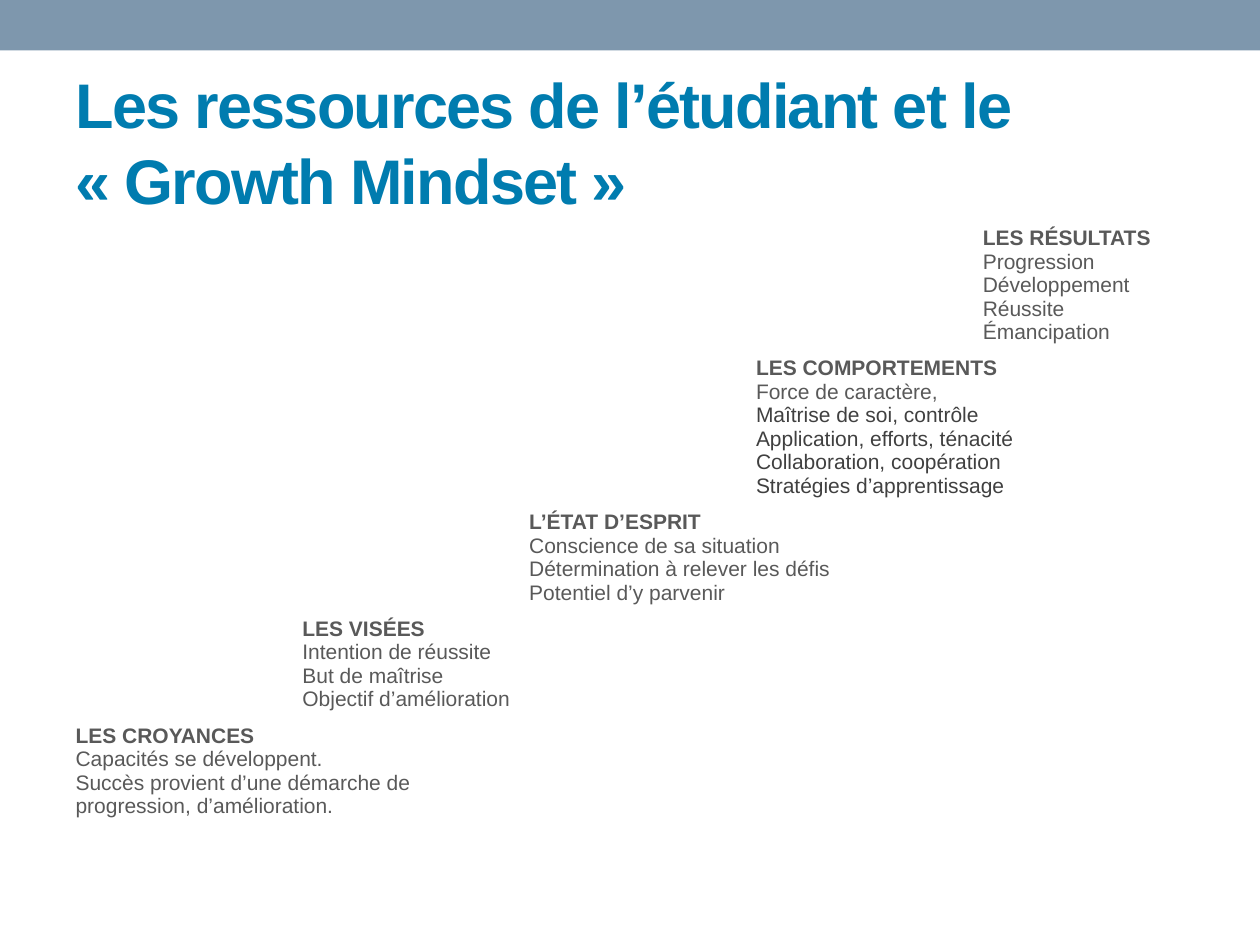
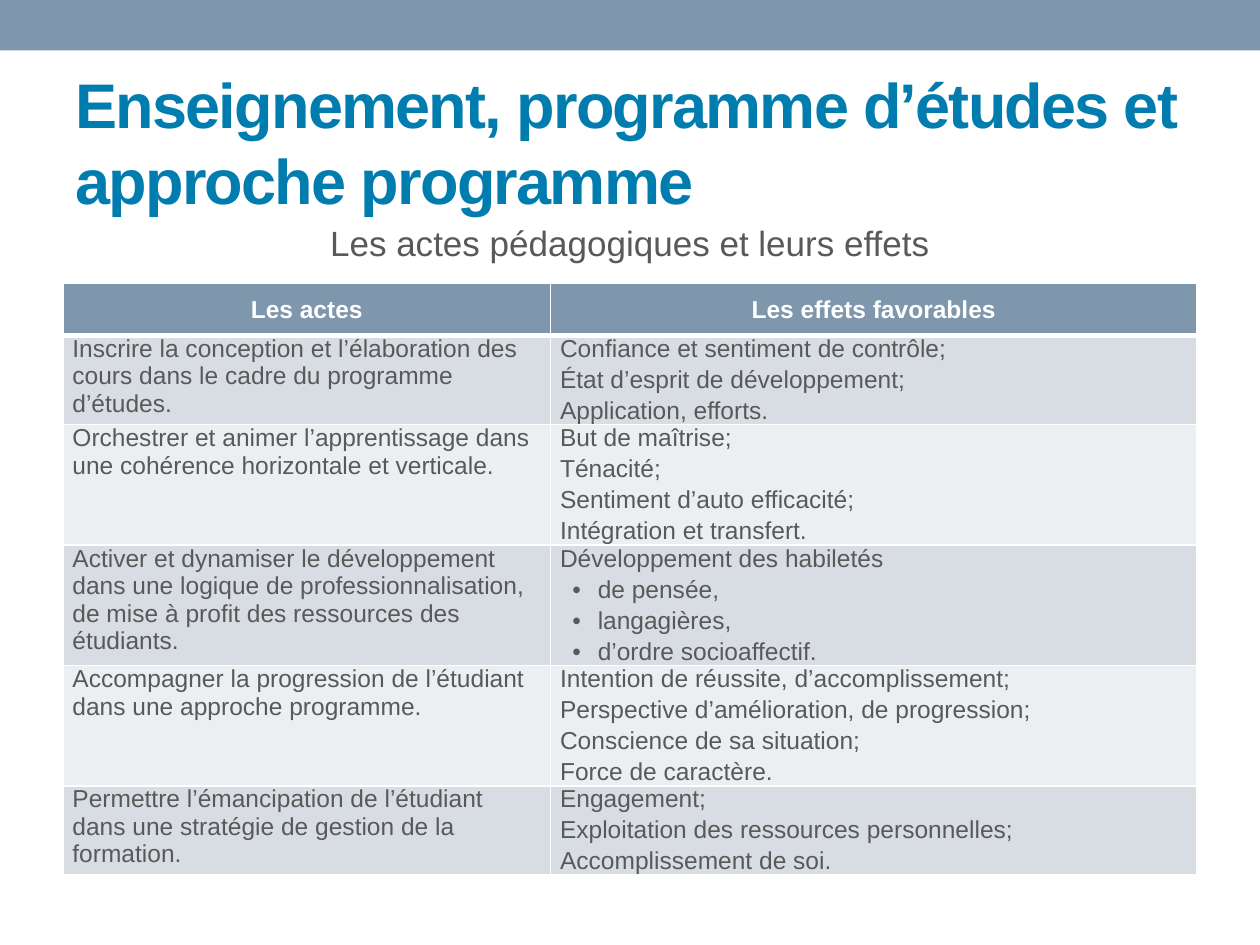
from dataclasses import dataclass

from pptx import Presentation
from pptx.dml.color import RGBColor
from pptx.enum.shapes import MSO_SHAPE
from pptx.enum.text import MSO_ANCHOR, PP_ALIGN
from pptx.oxml import parse_xml
from pptx.oxml.ns import nsdecls
from pptx.util import Cm, Pt


@dataclass(frozen=True)
class Theme:
    font: str = "Arial"
    band: str = "7E97AD"
    title: str = "007CAF"
    text: str = "595959"
    dark: str = "404040"
    white: str = "FFFFFF"
    stripes: tuple = ("D8DDE3", "ECEFF1")
    title_size: int = 36
    sub_size: int = 20
    cell_size: int = 14
    step_size: int = 12
    pitch: float = 1.12


@dataclass(frozen=True)
class Line:
    text: str
    size: int
    color: str
    bold: bool = False
    center: bool = False
    before: int = 0
    bullet: bool = False


@dataclass(frozen=True)
class Step:
    head: str
    items: tuple
    dark: tuple = ()


@dataclass(frozen=True)
class Act:
    text: str
    effects: tuple
    points: tuple = ()


THEME = Theme()
WIDTH, HEIGHT = Cm(25.4), Cm(19.05)
LEFT, BODY = Cm(1.27), Cm(22.86)
ROW = Cm(1.04)

STEPS = (
    Step("LES RÉSULTATS", ("Progression", "Développement", "Réussite", "Émancipation")),
    Step("LES COMPORTEMENTS", ("Force de caractère,",),
         ("Maîtrise de soi, contrôle", "Application, efforts, ténacité",
          "Collaboration, coopération", "Stratégies d’apprentissage")),
    Step("L’ÉTAT D’ESPRIT", ("Conscience de sa situation",
                             "Détermination à relever les défis",
                             "Potentiel d’y parvenir")),
    Step("LES VISÉES", ("Intention de réussite", "But de maîtrise",
                        "Objectif d’amélioration")),
    Step("LES CROYANCES", ("Capacités se développent.",
                           "Succès provient d’une démarche de progression, d’amélioration.")),
)

HEADS = ("Les actes", "Les effets favorables")
ACTS = (
    Act("Inscrire la conception et l’élaboration des cours dans le cadre du programme d’études.",
        ("Confiance et sentiment de contrôle;", "État d’esprit de développement;",
         "Application, efforts.")),
    Act("Orchestrer et animer l’apprentissage dans une cohérence horizontale et verticale.",
        ("But de maîtrise;", "Ténacité;", "Sentiment d’auto efficacité;",
         "Intégration et transfert.")),
    Act("Activer et dynamiser le développement dans une logique de professionnalisation, "
        "de mise à profit des ressources des étudiants.",
        ("Développement des habiletés",),
        ("de pensée,", "langagières,", "d’ordre socioaffectif.")),
    Act("Accompagner la progression de l’étudiant dans une approche programme.",
        ("Intention de réussite, d’accomplissement;",
         "Perspective d’amélioration, de progression;",
         "Conscience de sa situation;", "Force de caractère.")),
    Act("Permettre l’émancipation de l’étudiant dans une stratégie de gestion de la formation.",
        ("Engagement;", "Exploitation des ressources personnelles;",
         "Accomplissement de soi.")),
)


def rgb(color: str) -> RGBColor:
    return RGBColor.from_string(color)


def write(frame, lines: list) -> None:
    for index, line in enumerate(lines):
        para = frame.add_paragraph() if index else frame.paragraphs[0]
        para.text = line.text
        para.alignment = PP_ALIGN.CENTER if line.center else PP_ALIGN.LEFT
        para.space_before = Pt(line.before)
        font = para.font
        font.name, font.size, font.bold = THEME.font, Pt(line.size), line.bold
        font.color.rgb = rgb(line.color)
        if line.bullet:
            props = para._p.get_or_add_pPr()
            props.set("marL", str(Cm(0.76)))
            props.set("indent", str(Cm(-0.51)))
            for mark in (f'buFont {nsdecls("a")} typeface="{THEME.font}"',
                         f'buChar {nsdecls("a")} char="•"'):
                props.insert_element_before(parse_xml(f"<a:{mark}/>"),
                                            "a:tabLst", "a:defRPr", "a:extLst")


def write_cell(cell, lines: list) -> None:
    """Write lines at a fixed pitch, so that rows grow evenly."""
    write(cell.text_frame, lines)
    for para, line in zip(cell.text_frame.paragraphs, lines):
        para.line_spacing = Pt(line.size * THEME.pitch)


def add_page(deck, title: str):
    """Add a slide with the top band and its title."""
    slide = deck.slides.add_slide(deck.slide_layouts[6])
    band = slide.shapes.add_shape(MSO_SHAPE.RECTANGLE, 0, 0, WIDTH, Cm(1.02))
    band.shadow.inherit = False
    band.fill.solid()
    band.fill.fore_color.rgb = rgb(THEME.band)
    band.line.fill.background()

    frame = slide.shapes.add_textbox(LEFT, Cm(1.48), BODY, Cm(2.74)).text_frame
    frame.word_wrap = True
    frame.vertical_anchor = MSO_ANCHOR.MIDDLE
    write(frame, [Line(title, THEME.title_size, THEME.title, bold=True)])
    for run in frame.paragraphs[0].runs:
        run.font._element.set("spc", "-100")
    return slide


def add_grid(slide, top: int, rows: int, widths: list):
    """Add a table with clear cells, white rules and a thick rule below row one."""
    grid = slide.shapes.add_table(rows, len(widths), LEFT, top, BODY, ROW * rows).table
    for column, width in zip(grid.columns, widths):
        column.width = width
    for index, row in enumerate(grid.rows):
        for cell in row.cells:
            props = cell._tc.get_or_add_tcPr()
            for side in "LRTB":
                weight = 3 if (side, index) == ("B", 0) else 1
                props.append(parse_xml(
                    f'<a:ln{side} {nsdecls("a")} w="{Pt(weight)}"><a:solidFill>'
                    f'<a:srgbClr val="{THEME.white}"/></a:solidFill></a:ln{side}>'))
            cell.fill.background()
    return grid


def fill_cell(cell, color: str, lines: list) -> None:
    cell.fill.solid()
    cell.fill.fore_color.rgb = rgb(color)
    cell.margin_left = cell.margin_right = Cm(0.19)
    cell.margin_top = cell.margin_bottom = 0
    write_cell(cell, lines)


def add_steps(deck) -> None:
    slide = add_page(deck, "Les ressources de l’étudiant et le \v« Growth Mindset »")
    count = len(STEPS)
    grid = add_grid(slide, Cm(4.44), count, [BODY // count] * count)
    for row, step in enumerate(STEPS):
        column = count - 1 - row
        cell = grid.cell(row, column)
        if row:
            cell.merge(grid.cell(row, column + 1))
        size = THEME.step_size
        write_cell(cell,
                   [Line(step.head, size, THEME.text, bold=True)]
                   + [Line(item, size, THEME.text) for item in step.items]
                   + [Line(item, size, THEME.dark) for item in step.dark])


def add_acts(deck) -> None:
    slide = add_page(deck, "Enseignement, programme d’études et approche programme")
    grid = add_grid(slide, Cm(5.72), len(ACTS) + 1, [Cm(9.83), Cm(13.03)])
    size = THEME.cell_size
    for column, head in enumerate(HEADS):
        cell = grid.cell(0, column)
        fill_cell(cell, THEME.band,
                  [Line(head, size, THEME.white, bold=True, center=True, before=6)])
        cell.vertical_anchor = MSO_ANCHOR.MIDDLE
    for row, act in enumerate(ACTS, 1):
        color = THEME.stripes[(row - 1) % 2]
        fill_cell(grid.cell(row, 0), color, [Line(act.text, size, THEME.text, before=2)])
        fill_cell(grid.cell(row, 1), color,
                  [Line(item, size, THEME.text, before=2) for item in act.effects]
                  + [Line(item, size, THEME.text, before=2, bullet=True)
                     for item in act.points])

    cell = add_grid(slide, Cm(4.41), 1, [BODY]).cell(0, 0)
    cell.vertical_anchor = MSO_ANCHOR.MIDDLE
    write_cell(cell, [Line("Les actes pédagogiques et leurs effets",
                           THEME.sub_size, THEME.text, center=True)])


def main() -> None:
    deck = Presentation()
    deck.slide_width, deck.slide_height = WIDTH, HEIGHT
    add_steps(deck)
    add_acts(deck)
    deck.save("out.pptx")


if __name__ == "__main__":
    main()
